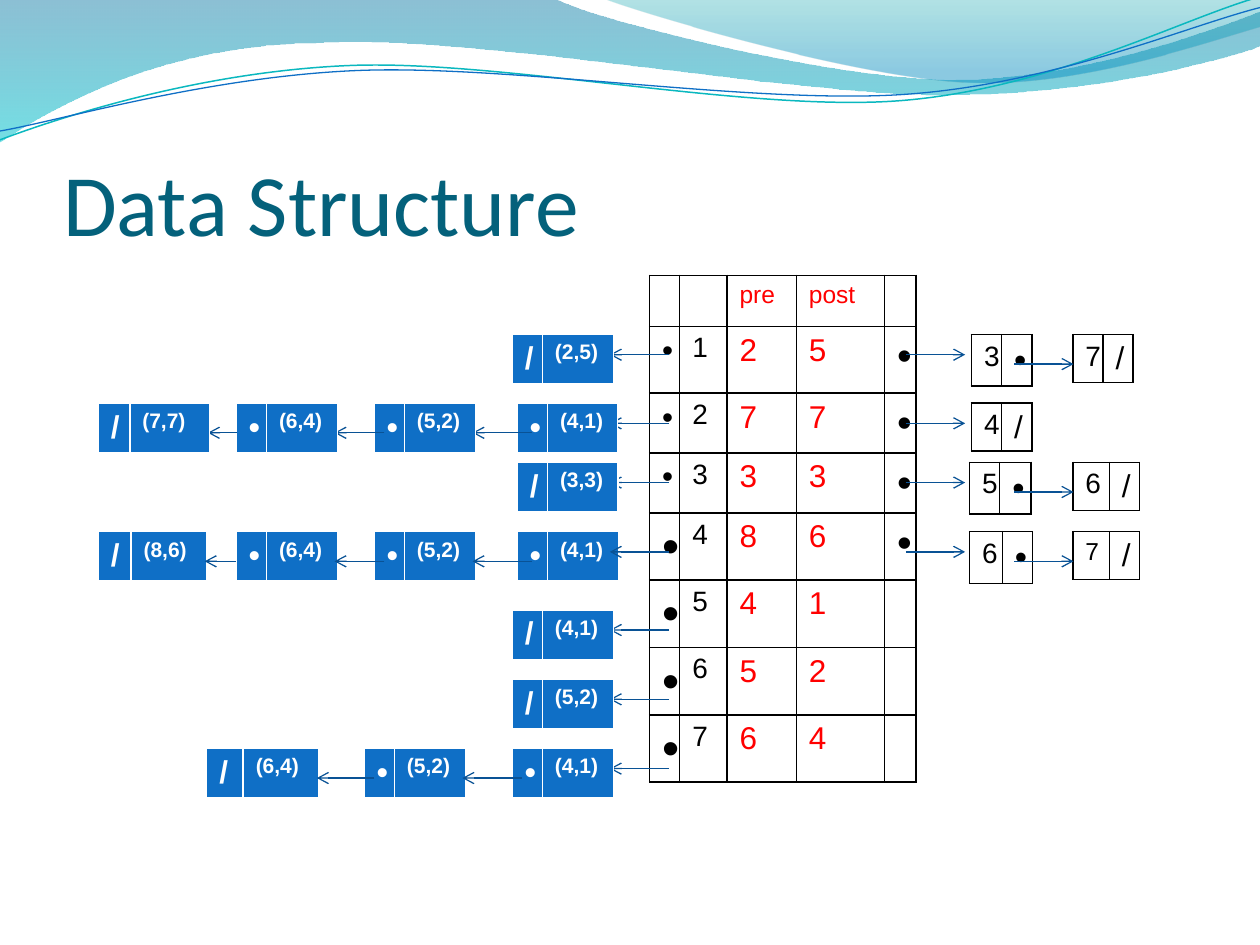
import math

from lxml import etree
from pptx import Presentation, util as u
from pptx.dml.color import RGBColor
from pptx.enum import shapes, text
from pptx.oxml.ns import qn

COLS, ROWS = 100, 75  # slide grid; every length below counts its columns and rows
WIDTH, HEIGHT = u.Inches(10), u.Inches(7.5)
COLORS = {"title": "04617B", "ink": "000000", "value": "FF0000", "paper": "FFFFFF",
          "node": "0F6FC6", "arrow": "095295", "teal": "0AB8BF", "deep": "0074A1",
          "aqua": "00C6CF", "sea": "00A1A9", "sky": "008BBF"}
DOT, END = "•", "/"

# Top of the linked lists beside each numbered row
LIST_TOPS = [26.55, 32, 36.7, 42.2, 48.4, 53.9, 59.4]
FIRST_LINK, NEXT_LINK = 1.6, 2.35  # arrow drop below the top of a list
PRE_POST = [(2, 5), (7, 7), (3, 3), (8, 6), (4, 1), (5, 2), (6, 4)]

# Right-hand lists by row: left, column widths, vertex, mark, vertex size
SUCCESSORS = {
    0: [(77.1, (2.3, 2.3), "3", DOT, 16), (85.15, (2.3, 2.3), "7", END, 16)],
    1: [(77.1, (2.3, 2.3), "4", END, 16)],
    2: [(76.95, (2.3, 2.5), "5", DOT, 16), (85.15, (2.9, 2.3), "6", END, 16)],
    3: [(76.95, (2.6, 2.3), "6", DOT, 16), (85.15, (2.9, 2.3), "7", END, 14)],
}
# Left-hand lists by row: left, column widths, mark, label, start of the incoming arrow
NODE = (2.3, 5.65)
PREDECESSORS = [
    [(40.65, NODE, END, "(2,5)", 53.1)],
    [(41.05, (2.3, 5.55), DOT, "(4,1)", 53.1), (29.7, NODE, DOT, "(5,2)", 42.2),
     (18.75, NODE, DOT, "(6,4)", 30.5), (7.8, (2.5, 6.35), END, "(7,7)", 18.8)],
    [(41.05, (2.3, 5.6), END, "(3,3)", 53.1)],
    [(41.05, NODE, DOT, "(4,1)", 53.1), (29.7, NODE, DOT, "(5,2)", 42.2),
     (18.75, NODE, DOT, "(6,4)", 30.5), (7.8, (2.6, 6), END, "(8,6)", 18.7)],
    [(40.65, NODE, END, "(4,1)", 53.1)],
    [(40.65, NODE, END, "(5,2)", 53.1)],
    [(40.65, NODE, DOT, "(4,1)", 53.1), (28.9, NODE, DOT, "(5,2)", 41.4),
     (16.4, (2.9, 6), END, "(6,4)", 29.7)],
]
# Rows whose arrows lie over the nodes, from the given node onwards
ARROWS_ABOVE = {3: 0, 6: 1}


def x(cols):
    return u.Emu(round(cols * WIDTH / COLS))


def y(rows):
    return u.Emu(round(rows * HEIGHT / ROWS))


def rgb(name):
    return RGBColor.from_string(COLORS[name])


def write(frame, content, size=16, color="ink", bold=False, font="Arial"):
    frame.text = content
    style = frame.paragraphs[0].runs[0].font
    style.size, style.bold, style.name = u.Pt(size), bold, font
    style.color.rgb = rgb(color)


def border_cell(cell, color, bottom):
    props = cell._tc.get_or_add_tcPr()
    for side, points in (("L", 1), ("R", 1), ("T", 1), ("B", bottom)):
        edge = etree.SubElement(props, qn(f"a:ln{side}"), w=str(u.Pt(points)))
        paint = etree.SubElement(edge, qn("a:solidFill"))
        etree.SubElement(paint, qn("a:srgbClr"), val=COLORS[color])


def add_grid(slide, left, top, widths, heights, rows, border="ink", bottom=1, fill=None):
    """Add a table; each cell is None or a (text, format) pair."""
    table = slide.shapes.add_table(len(heights), len(widths), x(left), y(top),
                                   x(sum(widths)), y(sum(heights))).table
    table.first_row = table.horz_banding = False
    for column, width in zip(table.columns, widths):
        column.width = x(width)
    for line, height, entries in zip(table.rows, heights, rows):
        line.height = y(height)
        for cell, entry in zip(line.cells, entries):
            border_cell(cell, border, bottom)
            if fill:
                cell.fill.solid()
                cell.fill.fore_color.rgb = rgb(fill)
            else:
                cell.fill.background()
            if entry:
                write(cell.text_frame, entry[0], **entry[1])


def add_arrow(slide, start, end, level):
    arrow = slide.shapes.add_connector(shapes.MSO_CONNECTOR.STRAIGHT,
                                       x(start), y(level), x(end), y(level))
    arrow.line.color.rgb = rgb("arrow")
    arrow.line.width = u.Pt(0.75)
    etree.SubElement(arrow.line._get_or_add_ln(), qn("a:tailEnd"), type="arrow")
    etree.SubElement(arrow._element.spPr, qn("a:effectLst"))


def add_outline(slide, segments, closed):
    """Draw segments of one point (a line) or three points (a cubic curve)."""
    points = [(x(px), y(py)) for segment in segments for px, py in segment]
    builder = slide.shapes.build_freeform(*points[0])
    builder.add_line_segments(points[1:], close=closed)
    outline = builder.convert_to_shape()
    outline.shadow.inherit = False
    steps = iter(list(outline._element.spPr.iter(qn("a:lnTo"))))
    for segment in segments[1:]:
        first, *others = [next(steps) for _ in segment]
        if others:
            first.tag = qn("a:cubicBezTo")
            for other in others:
                first.append(other[0])
                other.getparent().remove(other)
    return outline


def add_wave(slide, segments, stops):
    wave = add_outline(slide, segments, True)
    wave.line.fill.background()
    wave.fill.gradient()
    wave.fill.gradient_angle = 270
    for stop, (position, color, _) in zip(wave.fill.gradient_stops, stops):
        stop.position = position
        stop.color.rgb = rgb(color)
    for paint, (_, _, opacity) in zip(wave._element.spPr.iter(qn("a:srgbClr")), stops):
        etree.SubElement(paint, qn("a:alpha"), val=str(opacity * 1000))


def add_ripple(slide, color, weight, center, segments, tilt=2.7):
    """Draw a curve level, then turn it back so that it runs through its points."""
    cos, sin = math.cos(math.radians(tilt)), math.sin(math.radians(tilt))
    cx, cy = center
    level = [[(cx + (px - cx) * cos - (py - cy) * sin, cy + (px - cx) * sin + (py - cy) * cos)
              for px, py in segment] for segment in segments]
    ripple = add_outline(slide, level, False)
    ripple.rotation = 360 - tilt
    ripple.fill.background()
    ripple.line.color.rgb = rgb(color)
    ripple.line.width = u.Pt(weight)


def add_header(slide):
    add_wave(slide, [
        [(0, -0.1)], [(44, -0.1)],
        [(47.6, 1.7), (66.4, 6.3), (75.8, 6.3)], [(85.3, 6.3), (95.8, 2.6), (100, 0.9)],
        [(100.1, 3.6)], [(98.3, 4.4), (87, 7.6), (74.6, 7.5)],
        [(62.2, 7.5), (38.2, 2.8), (25.7, 3.4)], [(12.9, 3.5), (4.6, 8.3), (-0.1, 11.3)],
    ], [(0, "deep", 45), (1, "aqua", 55)])
    add_wave(slide, [
        [(47.9, -0.1)], [(50.9, 1.1), (68.2, 6.2), (76.9, 6.5)],
        [(85.6, 6.9), (96.1, 3.2), (100, 2.1)], [(100, 0)],
    ], [(0, "sea", 30), (0.8, "sky", 45)])
    add_ripple(slide, "teal", 0.85, (49.9, 5.75), [
        [(0, 11.1)], [(4.8, 9.3), (15.8, 5.7), (27.7, 5.2)],
        [(39.5, 4.7), (59.3, 8.9), (71.3, 8)], [(83.3, 7.1), (93.8, 1.5), (99.8, -0.2)]])
    add_ripple(slide, "node", 0.75, (49.95, 5.9), [
        [(0, 10.4)], [(4.7, 9.6), (16.4, 6.1), (28.3, 5.6)],
        [(40.3, 5.1), (59.7, 8.3), (71.7, 7.5)], [(83.6, 6.7), (94.1, 2.1), (100, 0.6)]])


def add_title(slide, left, top, width, height):
    title = slide.shapes.title
    title.left, title.top, title.width, title.height = x(left), y(top), x(width), y(height)
    frame = title.text_frame
    write(frame, "Data Structure", size=50, color="title", font="Calibri")
    frame.margin_left = frame.margin_right = frame.margin_bottom = 0
    frame.margin_top = u.Inches(0.05)
    frame.vertical_anchor = text.MSO_ANCHOR.BOTTOM
    frame.paragraphs[0].alignment = text.PP_ALIGN.LEFT


def add_vertex_table(slide, left, top):
    head, value = ({"size": size, "color": "value"} for size in (14, 18))
    rows = [[None, None, ("pre", head), ("post", head), None]]
    for row, (pre, post) in enumerate(PRE_POST):
        rows.append([(DOT, {"size": 18 if row < 3 else 28}), (str(row + 1), {}),
                     (str(pre), value), (str(post), value),
                     (DOT, {"size": 24}) if row in SUCCESSORS else None])
    heights = [4.05, 5.3, 4.75, 4.75, 5.3, 5.35, 5.35, 5.3]
    add_grid(slide, left, top, (2.4, 3.75, 5.5, 7, 2.5), heights, rows)


def add_successors(slide, top, nodes):
    for left, widths, vertex, mark, size in nodes:
        entries = [(vertex, {"size": size}), (mark, {"size": 20 if mark == DOT else 18})]
        add_grid(slide, left, top, widths, [4.1 if mark == DOT else 3.8], [entries])
    add_arrow(slide, 71.9, 76.6, top + FIRST_LINK)
    if len(nodes) > 1:
        add_arrow(slide, 80.5, 85.2, top + NEXT_LINK)


def add_predecessors(slide, top, nodes, above_from):
    above = []
    for position, (left, widths, mark, label, start) in enumerate(nodes):
        end, drop = (left + sum(widths) - 0.15, NEXT_LINK) if position else (48.4, FIRST_LINK)
        if position < above_from:
            add_arrow(slide, start, end, top + drop)
        else:
            above.append((start, end, top + drop))
        style = {"color": "paper", "bold": True}
        entries = [(mark, {"size": 18, **style}), (label, {"size": 12, **style})]
        add_grid(slide, left, top, widths, [4.05], [entries], "paper", 3, "node")
    for arrow in above:
        add_arrow(slide, *arrow)


def main():
    deck = Presentation()
    deck.slide_width, deck.slide_height = WIDTH, HEIGHT
    slide = deck.slides.add_slide(deck.slide_layouts[5])
    add_header(slide)
    add_title(slide, 5, 7.7, 90, 12.5)
    add_vertex_table(slide, 51.55, 21.85)
    for row, top in enumerate(LIST_TOPS):
        add_predecessors(slide, top, PREDECESSORS[row], ARROWS_ABOVE.get(row, COLS))
        if row in SUCCESSORS:
            add_successors(slide, top, SUCCESSORS[row])
    deck.save("out.pptx")


if __name__ == "__main__":
    main()
